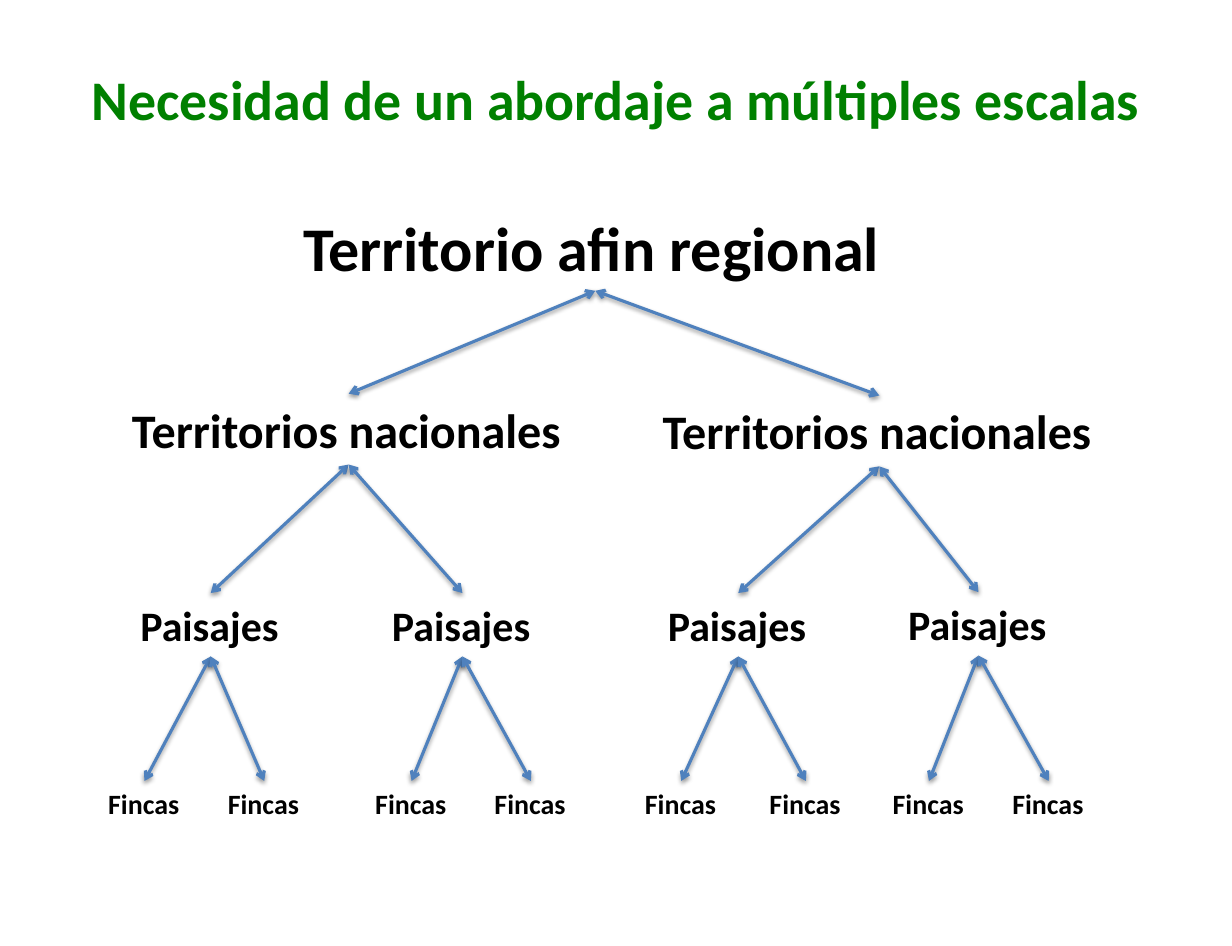
from lxml import etree
from pptx import Presentation
from pptx.dml.color import RGBColor
from pptx.enum.shapes import MSO_CONNECTOR
from pptx.enum.text import MSO_ANCHOR, MSO_AUTO_SIZE, PP_ALIGN
from pptx.oxml import parse_xml
from pptx.oxml.ns import nsdecls, qn
from pptx.util import Cm, Pt

STRAIGHT = MSO_CONNECTOR.STRAIGHT
MIDDLE = MSO_ANCHOR.MIDDLE
FIT_SHAPE = MSO_AUTO_SIZE.SHAPE_TO_FIT_TEXT
CENTER = PP_ALIGN.CENTER
TOP_SIDE, BOTTOM_SIDE = 0, 2

COLORS = {"title": "008000", "label": "000000", "arrow": "4F81BD"}
SHADOW = (
    f'<a:effectLst {nsdecls("a")}>'
    '<a:outerShdw blurRad="39370" dist="20320" dir="5400000" rotWithShape="0">'
    '<a:srgbClr val="000000"><a:alpha val="38000"/></a:srgbClr>'
    '</a:outerShdw></a:effectLst>'
)

# Each level: text, font size, box width, box height, (left, top) of every box
LEVELS = [
    ("Territorio afin regional", 40, 13.84, 2.0, [(6.61, 4.61)]),
    ("Territorios nacionales", 31, 10.41, 1.61, [(2.72, 8.95), (14.78, 8.99)]),
    ("Paisajes", 27, 3.76, 1.44,
     [(2.91, 13.48), (8.63, 13.48), (14.9, 13.48), (20.36, 13.46)]),
    ("Fincas", 18, 2.21, 1.07,
     [(left, 17.75) for left in
      (2.18, 4.9, 8.25, 10.96, 14.38, 17.21, 20.01, 22.73)]),
]


def add_label(page, text, size, color, left, top, width, height):
    box = page.shapes.add_textbox(Cm(left), Cm(top), Cm(width), Cm(height))
    frame = box.text_frame
    frame.margin_left = frame.margin_right = Cm(0.28)
    frame.margin_top = frame.margin_bottom = Cm(0.14)
    para = frame.paragraphs[0]
    para.text = text
    para.font.name = "Calibri"
    para.font.size = Pt(size)
    para.font.bold = True
    para.font.color.rgb = RGBColor.from_string(COLORS[color])
    return box


def add_double_arrow(page, parent, child):
    """Join the bottom of the parent box to the top of the child box."""
    arrow = page.shapes.add_connector(STRAIGHT, 0, 0, 0, 0)
    arrow.begin_connect(parent, BOTTOM_SIDE)
    arrow.end_connect(child, TOP_SIDE)
    arrow.line.width = Pt(2)
    arrow.line.color.rgb = RGBColor.from_string(COLORS["arrow"])
    line = arrow.line._get_or_add_ln()
    for end in ("a:headEnd", "a:tailEnd"):
        etree.SubElement(line, qn(end), type="arrow")
    arrow._element.spPr.append(parse_xml(SHADOW))


deck = Presentation()
deck.slide_width = Pt(793.75)
deck.slide_height = Pt(609.5)
page = deck.slides.add_slide(deck.slide_layouts[6])

title = add_label(page, "Necesidad de un abordaje a múltiples escalas", 36,
                  "title", 1.4, 0.86, 25.2, 2.74)
title.text_frame.word_wrap = True
title.text_frame.vertical_anchor = MIDDLE
title.text_frame.paragraphs[0].alignment = CENTER

parents = []
for text, size, width, height, places in LEVELS:
    boxes = []
    for index, (left, top) in enumerate(places):
        box = add_label(page, text, size, "label", left, top, width, height)
        box.text_frame.word_wrap = False
        box.text_frame.auto_size = FIT_SHAPE
        if parents:
            add_double_arrow(page, parents[index // 2], box)
        boxes.append(box)
    parents = boxes

deck.save("out.pptx")
